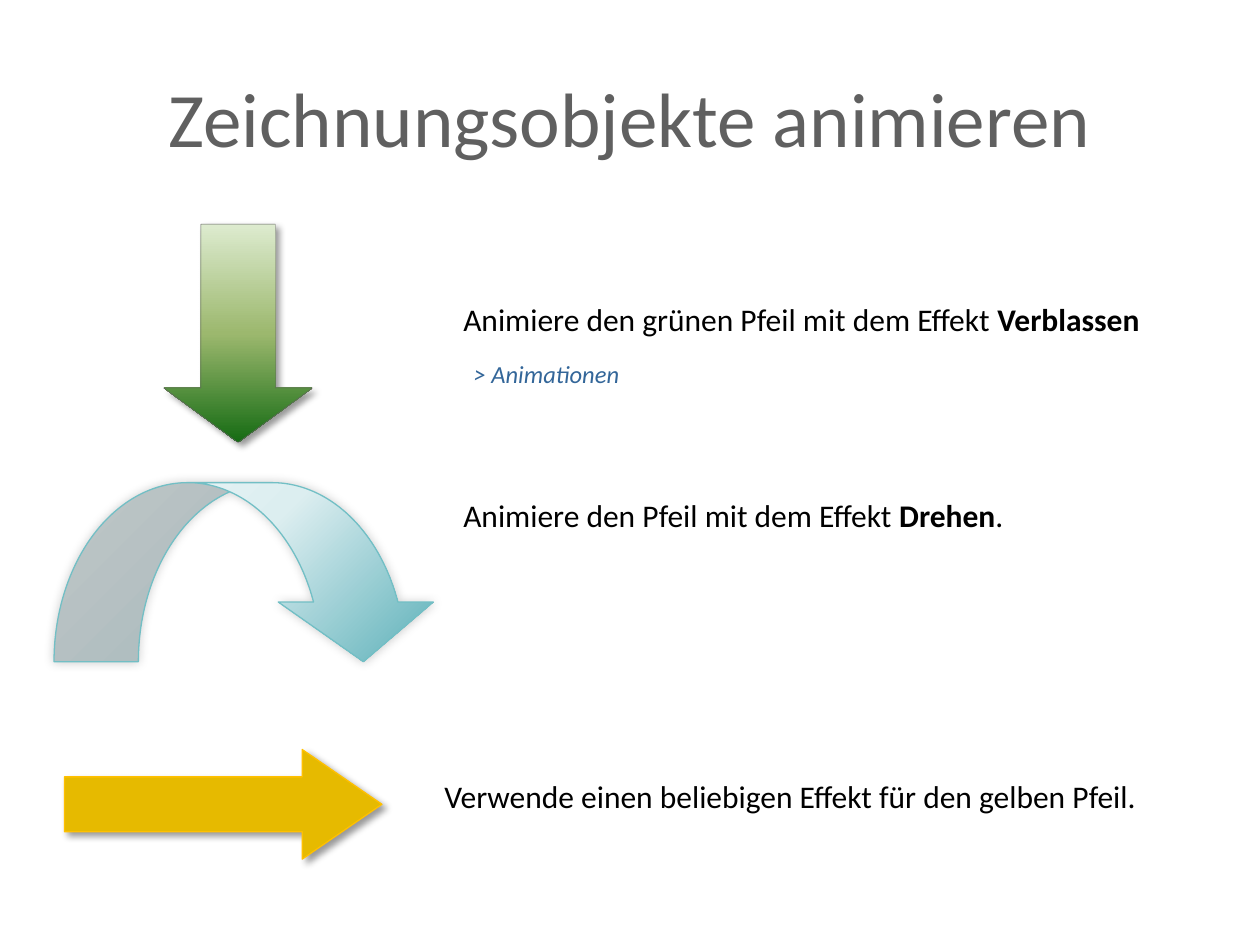
from lxml.etree import SubElement
from pptx import Presentation
from pptx.dml.color import RGBColor
from pptx.enum.shapes import MSO_SHAPE
from pptx.enum.text import MSO_ANCHOR, PP_ALIGN
from pptx.oxml.ns import qn
from pptx.util import Cm, Pt

BLACK = RGBColor(0x00, 0x00, 0x00)
GREY = RGBColor(0x60, 0x60, 0x60)
BLUE = RGBColor(0x33, 0x66, 0x99)
TEAL = RGBColor(0x72, 0xBF, 0xC5)
YELLOW = RGBColor(0xE6, 0xBA, 0x00)
AMBER = RGBColor(0xFF, 0xC0, 0x00)
GREENS = [(0, RGBColor(0xDD, 0xEB, 0xCF)), (50, RGBColor(0x9C, 0xB8, 0x6E)), (100, RGBColor(0x15, 0x6B, 0x13))]
TEALS = [(0, RGBColor(0xF0, 0xF8, 0xF9)), (46, RGBColor(0xDC, 0xEE, 0xF0)), (100, RGBColor(0x5A, 0xAF, 0xB8))]

presentation = Presentation()
presentation.slide_width = Cm(25.4)
presentation.slide_height = Cm(19.05)
slide = presentation.slides.add_slide(presentation.slide_layouts[6])


def add_text(text, box, size=18, color=BLACK, bold_part="", ending="", italic=False,
             align=PP_ALIGN.LEFT, anchor=MSO_ANCHOR.TOP):
    frame = slide.shapes.add_textbox(*map(Cm, box)).text_frame
    frame.word_wrap = True
    frame.vertical_anchor = anchor
    paragraph = frame.paragraphs[0]
    paragraph.alignment = align
    for part, bold in ((text, False), (bold_part, True), (ending, False)):
        if part:
            run = paragraph.add_run()
            run.text = part
            run.font.name = "Calibri"
            run.font.size = Pt(size)
            run.font.bold = bold
            run.font.italic = italic
            run.font.color.rgb = color


def add_arrow(kind, box, adjustments, line, width, shadow, color=None, stops=(), angle=0):
    shape = slide.shapes.add_shape(kind, *map(Cm, box))
    for index, value in enumerate(adjustments):
        shape.adjustments[index] = value
    if stops:
        shape.fill.gradient()
        gradient = shape.fill._fill._gradFill
        stop_list = gradient.find(qn("a:gsLst"))
        for old_stop in list(stop_list):
            stop_list.remove(old_stop)
        for position, stop_color in stops:
            stop = SubElement(stop_list, qn("a:gs"), pos=str(position * 1000))
            SubElement(stop, qn("a:srgbClr"), val=str(stop_color))
        gradient.find(qn("a:lin")).set("ang", str(angle * 60000))
    else:
        shape.fill.solid()
        shape.fill.fore_color.rgb = color
    shape.line.color.rgb = line
    shape.line.width = Pt(width)
    shape.shadow.inherit = False
    opacity, blur, distance, direction = shadow
    effects = shape._element.spPr.find(qn("a:effectLst"))
    outer = SubElement(effects, qn("a:outerShdw"), blurRad=str(Pt(blur)), dist=str(Pt(distance)),
                       dir=str(direction * 60000), algn="tl", rotWithShape="0")
    shadow_color = SubElement(outer, qn("a:srgbClr"), val=str(BLACK))
    SubElement(shadow_color, qn("a:alpha"), val=str(opacity * 1000))


add_text("Zeichnungsobjekte animieren", (1.27, 0.76, 22.86, 3.18), size=44, color=GREY,
         align=PP_ALIGN.CENTER, anchor=MSO_ANCHOR.MIDDLE)

add_arrow(MSO_SHAPE.DOWN_ARROW, (3.3, 4.52, 3, 4.4), (0.5, 0.366), GREY, 0.25,
          (40, 4, 3, 45), stops=GREENS, angle=90)
add_text("Animiere den grünen Pfeil mit dem Effekt ", (9.09, 5.92, 15.04, 1.02), bold_part="Verblassen")

add_arrow(MSO_SHAPE.CURVED_DOWN_ARROW, (1.09, 9.73, 7.8, 3.61), (0.471, 0.866, 0.333), TEAL, 0.75,
          (20, 6, 0, 225), stops=TEALS, angle=45)
add_text("Animiere den Pfeil mit dem Effekt ", (9.09, 9.88, 15.04, 1.02), bold_part="Drehen", ending=".")

add_arrow(MSO_SHAPE.RIGHT_ARROW, (1.3, 15.11, 6.4, 2.21), (0.5, 0.727), AMBER, 0.75,
          (40, 4, 3, 45), color=YELLOW)
add_text("Verwende einen beliebigen Effekt für den gelben Pfeil.", (8.71, 15.54, 15.8, 1.4))

add_text("> Animationen", (9.3, 7.11, 13.21, 0.86), size=14, color=BLUE, italic=True)

presentation.save("out.pptx")
